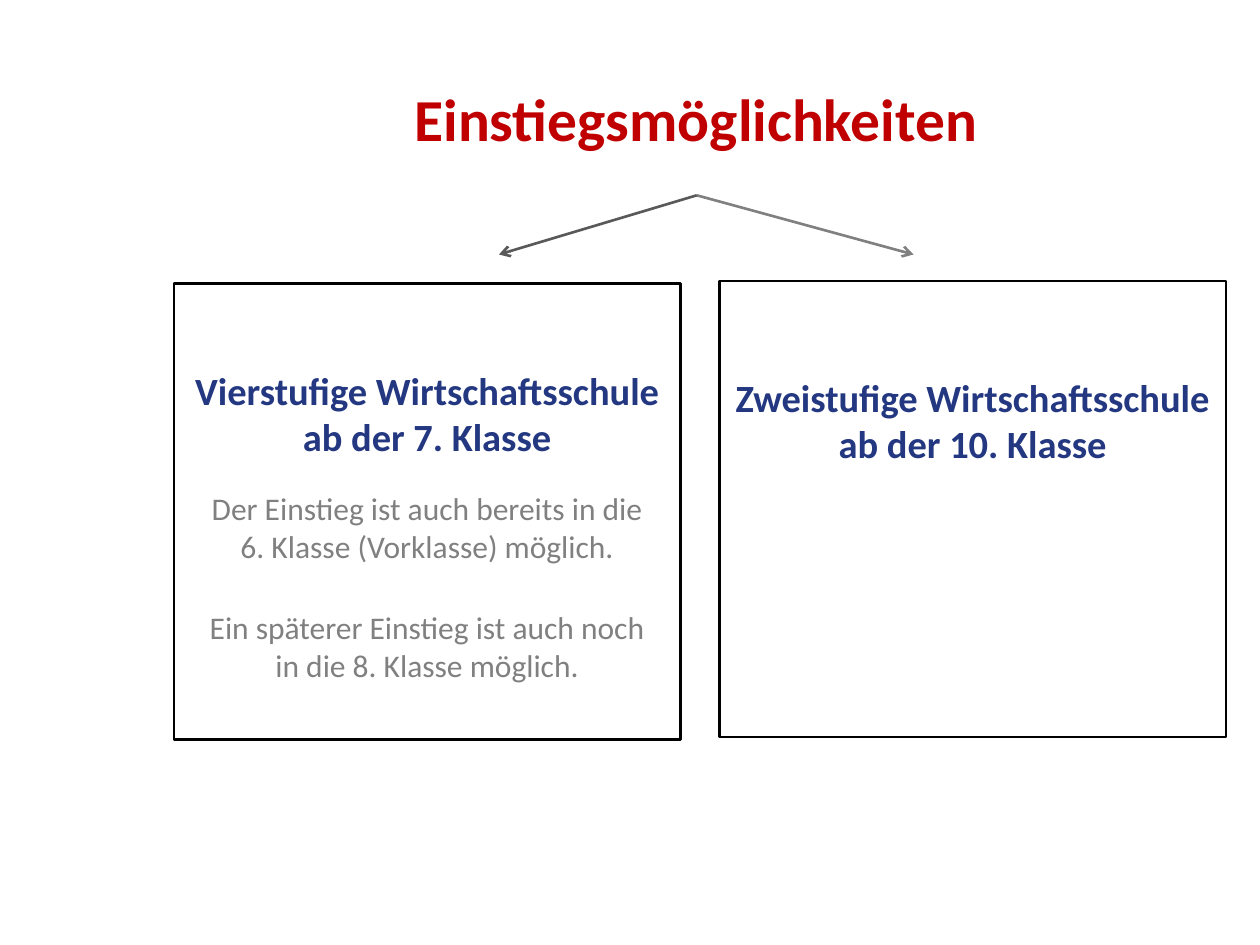
from dataclasses import dataclass

from lxml import etree
from pptx import Presentation
from pptx import util as u
from pptx.dml.color import RGBColor
from pptx.enum import shapes, text
from pptx.oxml.ns import qn


@dataclass(frozen=True)
class Theme:
    font: str = "Calibri"
    title: str = "C00000"
    heading: str = "233881"
    body: str = "808080"
    border: str = "000000"
    left_arrow: str = "595959"
    right_arrow: str = "808080"
    title_size: int = 34
    heading_size: int = 22
    body_size: int = 18
    line_width: float = 1.5


THEME = Theme()
WIDTH, HEIGHT = 10, 7.5
CARD_WIDTH, CARD_HEIGHT = 4.02, 3.62
CARD_LEFT, CARD_PITCH = 1.38, 4.33
FORK = (5.53, 1.55)
ARROW_END = 2.02


def rgb(value):
    return RGBColor.from_string(value)


def style(p, size, color, bold=False, align=text.PP_ALIGN.CENTER, before=0):
    p.alignment = align
    p.space_before = u.Pt(before)
    p.font.name = THEME.font
    p.font.size = u.Pt(size)
    p.font.bold = bold
    p.font.color.rgb = rgb(color)


def add_title(slide, words):
    sp = slide.shapes.title
    sp.left, sp.top, sp.width, sp.height = map(u.Inches, (3.19, 0.6, 4.72, 0.78))
    tf = sp.text_frame
    tf.text = words
    tf.auto_size = text.MSO_AUTO_SIZE.NONE
    tf.vertical_anchor = text.MSO_ANCHOR.TOP
    style(tf.paragraphs[0], THEME.title_size, THEME.title, True, text.PP_ALIGN.LEFT)


def add_card(slide, column, top, inset, heading, notes=()):
    left = CARD_LEFT + column * CARD_PITCH
    sp = slide.shapes.add_shape(
        shapes.MSO_SHAPE.RECTANGLE,
        *map(u.Inches, (left, top, CARD_WIDTH, CARD_HEIGHT)),
    )
    sp.shadow.inherit = False
    sp.fill.background()
    sp.line.color.rgb = rgb(THEME.border)
    sp.line.width = u.Pt(THEME.line_width)
    tf = sp.text_frame
    tf.word_wrap = True
    tf.vertical_anchor = text.MSO_ANCHOR.TOP
    tf.margin_top = u.Inches(inset)
    p = tf.paragraphs[0]
    p.text = heading
    style(p, THEME.heading_size, THEME.heading, True)
    for words, before in notes:
        p = tf.add_paragraph()
        p.text = words
        style(p, THEME.body_size, THEME.body, before=before)


def add_arrow(slide, end_x, color):
    sp = slide.shapes.add_connector(
        shapes.MSO_CONNECTOR.STRAIGHT,
        *map(u.Inches, (*FORK, end_x, ARROW_END)),
    )
    sp.line.color.rgb = rgb(color)
    sp.line.width = u.Pt(THEME.line_width)
    etree.SubElement(sp.line._get_or_add_ln(), qn("a:tailEnd"), type="arrow")
    etree.SubElement(sp._element.spPr, qn("a:effectLst"))


def main():
    prs = Presentation()
    prs.slide_width, prs.slide_height = u.Inches(WIDTH), u.Inches(HEIGHT)
    slide = prs.slides.add_slide(prs.slide_layouts[5])
    add_title(slide, "Einstiegsmöglichkeiten")
    add_card(
        slide, 0, 2.25, 0.66,
        "Vierstufige Wirtschaftsschule ab der 7. Klasse",
        [
            ("Der Einstieg ist auch bereits in die\v6. Klasse (Vorklasse) möglich.", 17),
            ("Ein späterer Einstieg ist auch noch\vin die 8. Klasse möglich.", 25),
        ],
    )
    add_card(slide, 1, 2.23, 0.74, "Zweistufige Wirtschaftsschule ab der 10. Klasse")
    add_arrow(slide, 7.25, THEME.right_arrow)
    add_arrow(slide, 3.96, THEME.left_arrow)
    prs.save("out.pptx")


if __name__ == "__main__":
    main()
